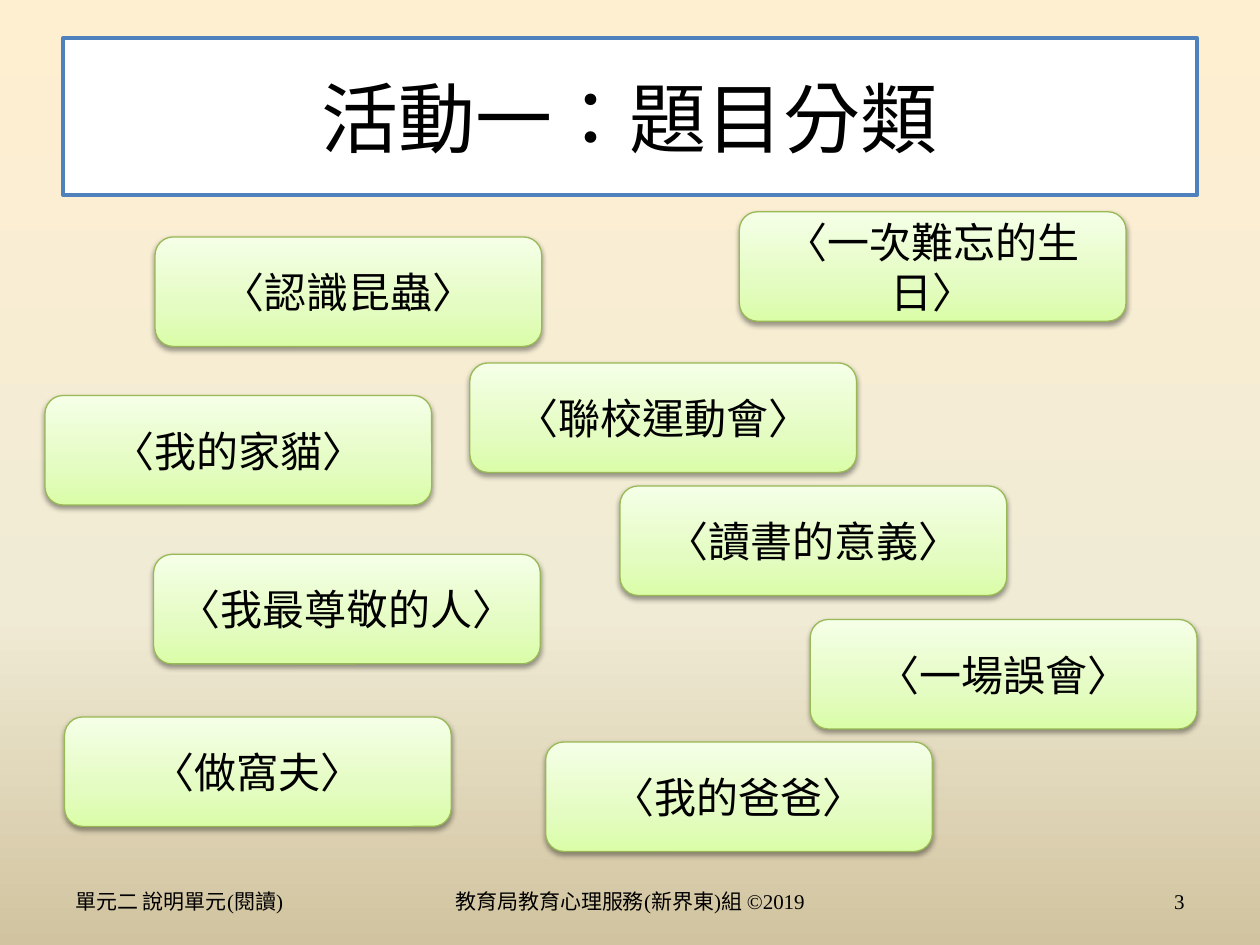
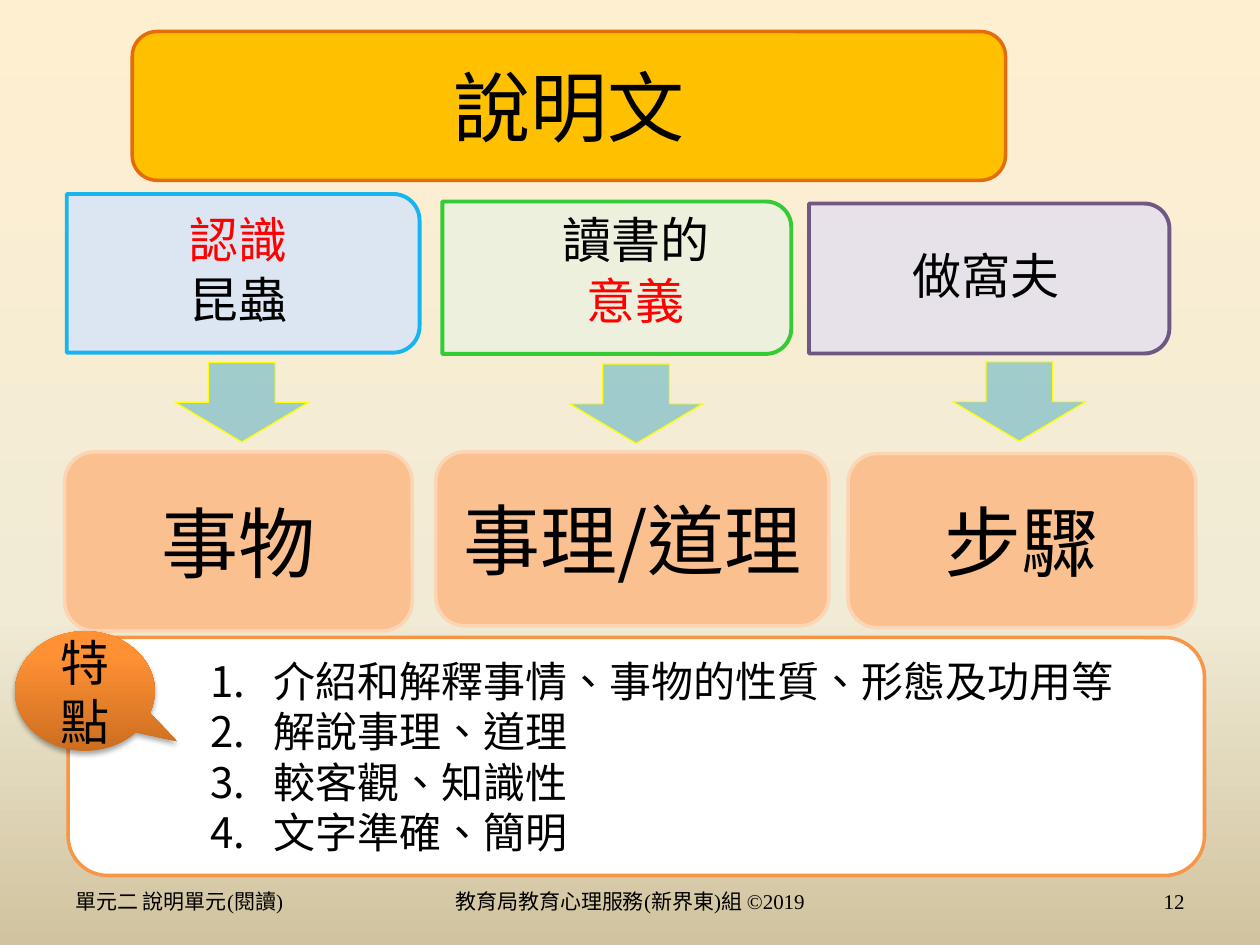
from lxml import etree
from pptx import Presentation
from pptx.dml.color import RGBColor
from pptx.enum.shapes import MSO_SHAPE
from pptx.enum.text import MSO_ANCHOR, MSO_AUTO_SIZE, PP_ALIGN
from pptx.oxml import parse_xml
from pptx.oxml.ns import nsdecls, qn
from pptx.util import Pt

ROUND, DOWN = MSO_SHAPE.ROUNDED_RECTANGLE, MSO_SHAPE.DOWN_ARROW
CARD, BUBBLE = MSO_SHAPE.ROUND_2_SAME_RECTANGLE, MSO_SHAPE.OVAL_CALLOUT
LEFT, MID, RIGHT = PP_ALIGN.LEFT, PP_ALIGN.CENTER, PP_ALIGN.RIGHT
CENTRE, TOP = MSO_ANCHOR.MIDDLE, MSO_ANCHOR.TOP
FIXED = MSO_AUTO_SIZE.NONE

SANS, SERIF = "Noto Sans CJK SC", "Times New Roman"
COLORS = {
    "ink": "000000", "red": "FF0000", "white": "FFFFFF", "blue": "4F81BD",
    "lime": "98B955", "gold": "FFC000", "rust": "E46C0A", "peach": "FAC090",
    "cream": "FCD5B5", "orange": "F79646", "teal": "4BACC6", "yellow": "FFFF00",
    "ice": "DCE6F2", "sky": "00B0F0", "mint": "EBF1DE", "green": "33CC33",
    "mauve": "E6E0EC", "plum": "604A7B",
}
FADES = {
    "sand": (90, [(0, "FFEFD1"), (65, "F0EBD5"), (100, "D1C39F")]),
    "leaf": (270, [(0, "DAFDA7"), (35, "E4FCC2"), (100, "F5FFE7")]),
    "flame": (270, [(0, "CC6E20"), (80, "FF9034"), (100, "FF9136")]),
}


def color(name):
    return RGBColor.from_string(COLORS[name])


def fade(fill, root, name):
    angle, stops = FADES[name]
    fill.gradient()
    old = root.xpath(".//a:gradFill")[0]
    marks = "".join(
        f'<a:gs pos="{pos * 1000}"><a:srgbClr val="{tone}"/></a:gs>' for pos, tone in stops)
    new = parse_xml(
        f'<a:gradFill {nsdecls("a")} rotWithShape="1"><a:gsLst>{marks}</a:gsLst>'
        f'<a:lin ang="{angle * 60000}" scaled="0"/></a:gradFill>')
    old.getparent().replace(old, new)


class Deck:
    def __init__(self):
        self.prs = Presentation()
        self.prs.slide_width, self.prs.slide_height = Pt(720), Pt(540)
        master = self.prs.slide_master
        fade(master.background.fill, master.element, "sand")

    def page(self, layout, number):
        self.slide = self.prs.slides.add_slide(self.prs.slide_layouts[layout])
        notes = [
            (36, 168, LEFT, "單元二 說明單元(閱讀)"),
            (246, 228, MID, "教育局教育心理服務(新界東)組 ©2019"),
            (516, 168, RIGHT, number),
        ]
        for left, width, align, text in notes:
            self.text((left, 500.4, width, 28.8), [[(text, SERIF, "ink")]], 12, align)

    def say(self, shape, paras, size, align=MID, space=1.0, after=0, anchor=CENTRE):
        frame = shape.text_frame
        frame.word_wrap, frame.auto_size = True, FIXED
        frame.vertical_anchor = anchor
        for i, runs in enumerate(paras):
            para = frame.add_paragraph() if i else frame.paragraphs[0]
            para.alignment, para.line_spacing = align, space
            para.space_before, para.space_after = Pt(0), Pt(after)
            for text, face, tone in runs:
                run = para.add_run()
                run.text = text
                run.font.name, run.font.size = face, Pt(size)
                run.font.color.rgb = color(tone)
                props = run.font._element
                props.set("lang", "zh-TW")
                east = etree.Element(qn("a:ea"), typeface=SANS)
                props.find(qn("a:latin")).addnext(east)

    def text(self, box, paras, size, align=MID, space=1.0, after=0, anchor=CENTRE):
        shape = self.slide.shapes.add_textbox(*map(Pt, box))
        self.say(shape, paras, size, align, space, after, anchor)

    def label(self, box, paras, anchor=CENTRE):
        self.text(box, paras, 28, space=0.9, after=4.2, anchor=anchor)

    def paint(self, shape, fill, line, width):
        if fill in FADES:
            fade(shape.fill, shape.element, fill)
        else:
            shape.fill.solid()
            shape.fill.fore_color.rgb = color(fill)
        if line:
            shape.line.color.rgb = color(line)
            shape.line.width = Pt(width)
        else:
            shape.line.fill.background()

    def shape(self, kind, box, fill, line=None, width=2):
        shape = self.slide.shapes.add_shape(kind, *map(Pt, box))
        shape.shadow.inherit = False
        self.paint(shape, fill, line, width)
        return shape

    def clear(self, shape, part, share):
        tone = shape.element.xpath(f"./p:spPr/{part}a:solidFill/a:srgbClr")[0]
        etree.SubElement(tone, qn("a:alpha"), val=str(share * 1000))

    def shade(self, shape, share, drop):
        shadow = parse_xml(
            f'<a:outerShdw {nsdecls("a")} blurRad="{Pt(3.1)}" dist="{Pt(drop)}" dir="5400000" '
            f'rotWithShape="0"><a:srgbClr val="{COLORS["ink"]}">'
            f'<a:alpha val="{share * 1000}"/></a:srgbClr></a:outerShdw>')
        shape.element.xpath("./p:spPr/a:effectLst")[0].append(shadow)

    def hold(self, index, box):
        shape = self.slide.placeholders[index]
        shape.left, shape.top, shape.width, shape.height = map(Pt, box)
        self.slide.shapes.element.append(shape.element)
        return shape

    def tag(self, left, top, name):
        shape = self.shape(ROUND, (left, top, 221, 62.6), "leaf", "lime", 0.75)
        self.shade(shape, 38, 1.6)
        runs = [("〈", SANS, "ink"), (name, SERIF, "ink"), ("〉", SANS, "ink")]
        self.say(shape, [runs], 24)

    def number(self, shape):
        for para in shape.text_frame.paragraphs:
            props = para._p.get_or_add_pPr()
            props.set("marL", str(Pt(103.7)))
            props.set("indent", str(Pt(-36)))
            etree.SubElement(props, qn("a:buFont"), typeface=SANS)
            etree.SubElement(props, qn("a:buAutoNum"), type="arabicPeriod")


def sort(deck):
    deck.page(5, "3")
    title = deck.hold(0, (36, 21.6, 648, 90))
    deck.paint(title, "white", "blue", 2)
    deck.say(title, [[("活動一：題目分類", SERIF, "ink")]], 44)
    tags = [
        (422.5, 121, "一次難忘的生日"),
        (268.5, 207.4, "聯校運動會"), (87.8, 316.8, "我最尊敬的人"),
        (463, 354, "一場誤會"), (88.6, 135.4, "認識昆蟲"),
        (311.8, 424, "我的爸爸"), (36.9, 409.7, "做窩夫"),
        (354.3, 277.7, "讀書的意義"), (25.7, 226, "我的家貓"),
    ]
    for left, top, name in tags:
        deck.tag(left, top, name)


def explain(deck):
    deck.page(1, "12")
    for left, top in [(100.1, 207.2), (325.4, 208), (544.3, 206.8)]:
        arrow = deck.shape(DOWN, (left, top, 76.3, 45.4), "teal", "yellow", 0.75)
        deck.clear(arrow, "", 50)

    goals = [
        ((249, 258.2, 224.6, 99.4), "事理/道理"),
        ((484.6, 259.2, 198.7, 99.4), "步驟"),
        ((36.9, 258.2, 198.7, 102.4), "事物"),
    ]
    for box, name in goals:
        goal = deck.shape(ROUND, box, "peach", "cream")
        deck.say(goal, [[(name, SANS, "ink")]], 44)

    cards = [
        ((93.6, 55.4, 90.7, 201.6), "ice", "sky", 100, 90),
        ((308.9, 59, 87.1, 199.4), "mint", "green", 90, 100),
        ((522.4, 56.2, 85.7, 205.9), "mauve", "plum", 90, 90),
    ]
    for box, fill, line, body, edge in cards:
        card = deck.shape(CARD, box, fill, line, 2.25)
        card.rotation = 90
        deck.clear(card, "", body)
        deck.clear(card, "a:ln/", edge)
    insect = [[("認識", SERIF, "red")], [("昆蟲", SERIF, "ink")]]
    deck.label((38.2, 115.2, 196.6, 81.4), insect)
    deck.label((463, 120.2, 200.9, 77.8), [[("做窩夫", SERIF, "ink")]])

    head = (75.6, 18, 499, 85)
    deck.shape(ROUND, head, "gold", "rust")
    deck.say(deck.hold(0, head), [[("說明文", SANS, "ink")]], 44)

    deck.shape(ROUND, (38.9, 364.3, 649.4, 136), "white", "orange")
    traits = ["介紹和解釋事情、事物的性質、形態及功用等", "解說事理、道理", "較客觀、知識性", "文字準確、簡明"]
    body = deck.hold(1, (45.5, 371, 636, 124))
    deck.say(body, [[(trait, SANS, "ink")] for trait in traits], 24, LEFT, anchor=TOP)
    deck.number(body)

    bubble = deck.shape(BUBBLE, (8.6, 360.7, 79.9, 68.4), "flame")
    bubble.adjustments[0], bubble.adjustments[1] = 0.66, 0.42
    deck.shade(bubble, 35, 1.8)
    deck.say(bubble, [[("特點", SERIF, "ink")]], 28)

    study = [[("讀書的", SERIF, "ink")], [("意義", SERIF, "red")]]
    deck.label((306.7, 120.2, 113, 73.4), study, TOP)


def main():
    deck = Deck()
    sort(deck)
    explain(deck)
    deck.prs.save("out.pptx")


if __name__ == "__main__":
    main()
